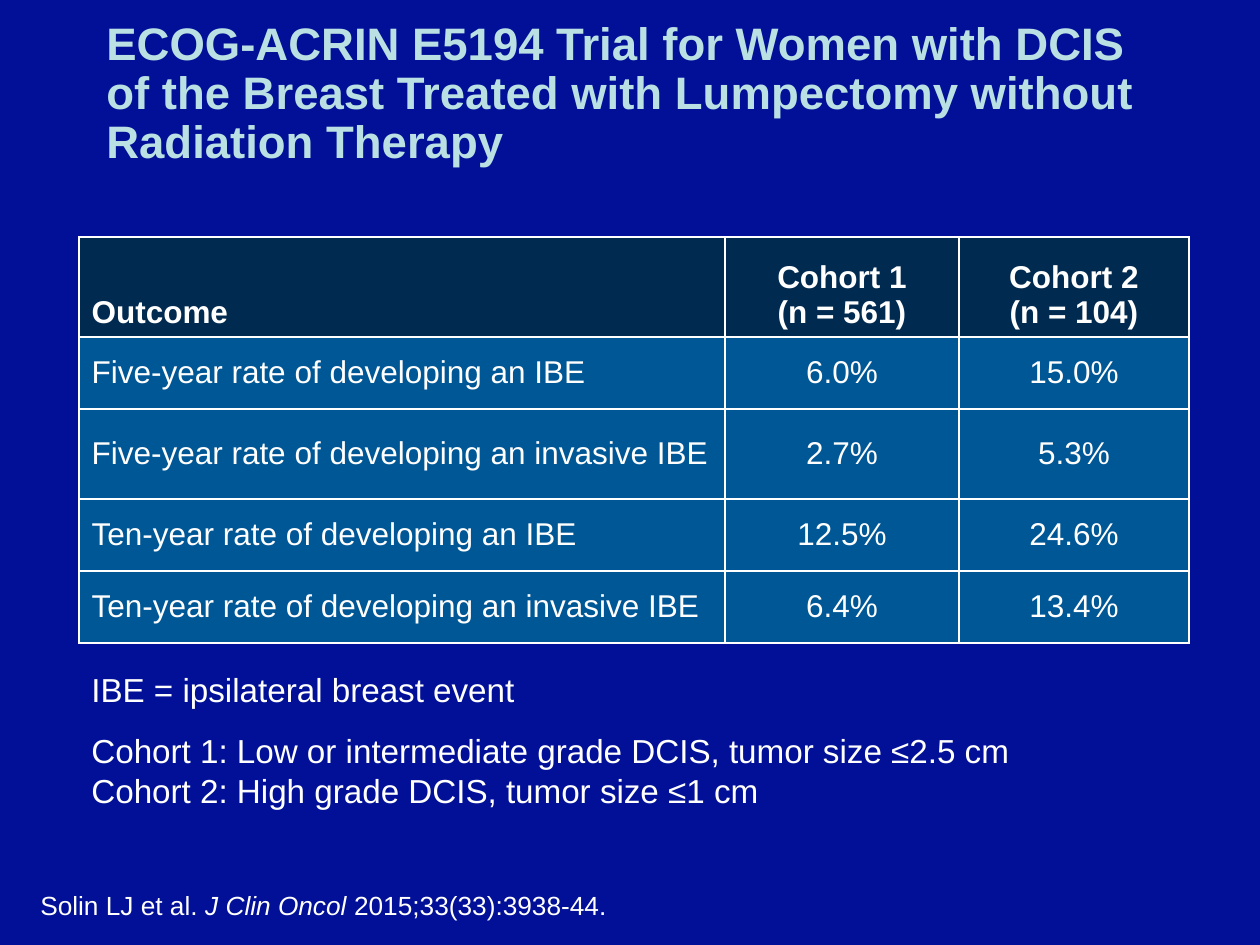
from dataclasses import dataclass

from lxml.etree import SubElement
from pptx import Presentation
from pptx.dml.color import RGBColor
from pptx.enum.text import MSO_ANCHOR as Anchor, PP_ALIGN as Align
from pptx.oxml.ns import qn
from pptx.util import Emu, Pt

EMU_PER_PX = 914400 / 126
WHITE, TITLE_BLUE = "FFFFFF", "BBE0E3"
BACKGROUND, HEADER_FILL, BODY_FILL = "011097", "012A50", "005796"
COLUMN_WIDTHS = (646, 234, 230)
ROW_HEIGHTS = (100, 72, 90, 72, 72)
OUTCOMES = (
    ("Outcome", "Cohort 1\n(n = 561)", "Cohort 2\n(n = 104)"),
    ("Five-year rate of developing an IBE", "6.0%", "15.0%"),
    ("Five-year rate of developing an invasive IBE", "2.7%", "5.3%"),
    ("Ten-year rate of developing an IBE", "12.5%", "24.6%"),
    ("Ten-year rate of developing an invasive IBE", "6.4%", "13.4%"),
)


@dataclass(frozen=True)
class Style:
    """Look of the paragraphs in one text frame."""
    size: int
    color: str = WHITE
    bold: bool = False
    align: Align = Align.LEFT
    line_spacing: float = 1.0
    space_before: int = 0


@dataclass(frozen=True)
class TextBlock:
    """A text box: place in px, paragraphs of (text, italic) spans, and style."""
    left: int
    top: int
    width: int
    height: int
    paragraphs: tuple
    style: Style
    anchor: Anchor = Anchor.TOP


BLOCKS = (
    TextBlock(94, 16, 1071, 158, ((
        ("ECOG-ACRIN E5194 Trial for Women with DCIS of the Breast Treated "
         "with Lumpectomy without Radiation Therapy", False),),),
        Style(26, TITLE_BLUE, bold=True, line_spacing=0.9), Anchor.MIDDLE),
    TextBlock(79, 663, 1159, 155, (
        (("IBE = ipsilateral breast event", False),),
        (("Cohort 1: Low or intermediate grade DCIS, tumor size ≤2.5 cm\v"
          "Cohort 2: High grade DCIS, tumor size ≤1 cm", False),)),
        Style(19, space_before=12)),
    TextBlock(28, 883, 1232, 44, ((
        ("Solin LJ et al. ", False), ("J Clin Oncol ", True),
        ("2015;33(33):3938-44.", False)),),
        Style(15)),
)


def px(length: int) -> Emu:
    """Turn px into EMU."""
    return Emu(round(length * EMU_PER_PX))


def paint(fill, color: str) -> None:
    """Make a fill solid in a hex colour."""
    fill.solid()
    fill.fore_color.rgb = RGBColor.from_string(color)


def style_paragraph(para, style: Style) -> None:
    """Apply a style to one paragraph."""
    para.alignment = style.align
    para.line_spacing = style.line_spacing
    para.space_before = Pt(style.space_before)
    para.font.name = "Arial"
    para.font.size = Pt(style.size)
    para.font.bold = style.bold
    para.font.color.rgb = RGBColor.from_string(style.color)


def draw_block(slide, block: TextBlock) -> None:
    """Add one text box with its paragraphs."""
    box = slide.shapes.add_textbox(
        px(block.left), px(block.top), px(block.width), px(block.height))
    frame = box.text_frame
    frame.word_wrap = True
    frame.vertical_anchor = block.anchor
    for index, spans in enumerate(block.paragraphs):
        para = frame.add_paragraph() if index else frame.paragraphs[0]
        para.text = ""
        for text, italic in spans:
            if "\v" in text:
                first, second = text.split("\v")
                para.add_run().text = first
                para.add_line_break()
                text = second
            span = para.add_run()
            span.text = text
            if italic:
                span.font.italic = True
        style_paragraph(para, block.style)


def add_borders(cell, color: str) -> None:
    """Give a cell 1 pt lines on its four sides."""
    properties = cell._tc.get_or_add_tcPr()
    for side in ("a:lnL", "a:lnR", "a:lnT", "a:lnB"):
        line = SubElement(properties, qn(side), w=str(Pt(1)))
        SubElement(SubElement(line, qn("a:solidFill")), qn("a:srgbClr"), val=color)


def draw_table(slide, left: int, top: int) -> None:
    """Add the outcome table."""
    table = slide.shapes.add_table(
        len(ROW_HEIGHTS), len(COLUMN_WIDTHS), px(left), px(top),
        px(sum(COLUMN_WIDTHS)), px(sum(ROW_HEIGHTS))).table
    for column, width in zip(table.columns, COLUMN_WIDTHS):
        column.width = px(width)
    for row_index, (row, height) in enumerate(zip(table.rows, ROW_HEIGHTS)):
        row.height = px(height)
        header = row_index == 0
        for column_index, cell in enumerate(row.cells):
            add_borders(cell, WHITE)
            paint(cell.fill, HEADER_FILL if header else BODY_FILL)
            cell.vertical_anchor = Anchor.BOTTOM if header else Anchor.MIDDLE
            cell.text = OUTCOMES[row_index][column_index]
            align = Align.CENTER if column_index else Align.LEFT
            for para in cell.text_frame.paragraphs:
                style_paragraph(para, Style(18, bold=header, align=align))


def main() -> None:
    """Build and save the deck."""
    deck = Presentation()
    deck.slide_width, deck.slide_height = px(1260), px(945)
    slide = deck.slides.add_slide(deck.slide_layouts[6])
    paint(slide.background.fill, BACKGROUND)
    draw_table(slide, 79, 237)
    for block in BLOCKS:
        draw_block(slide, block)
    deck.save("out.pptx")


if __name__ == "__main__":
    main()
